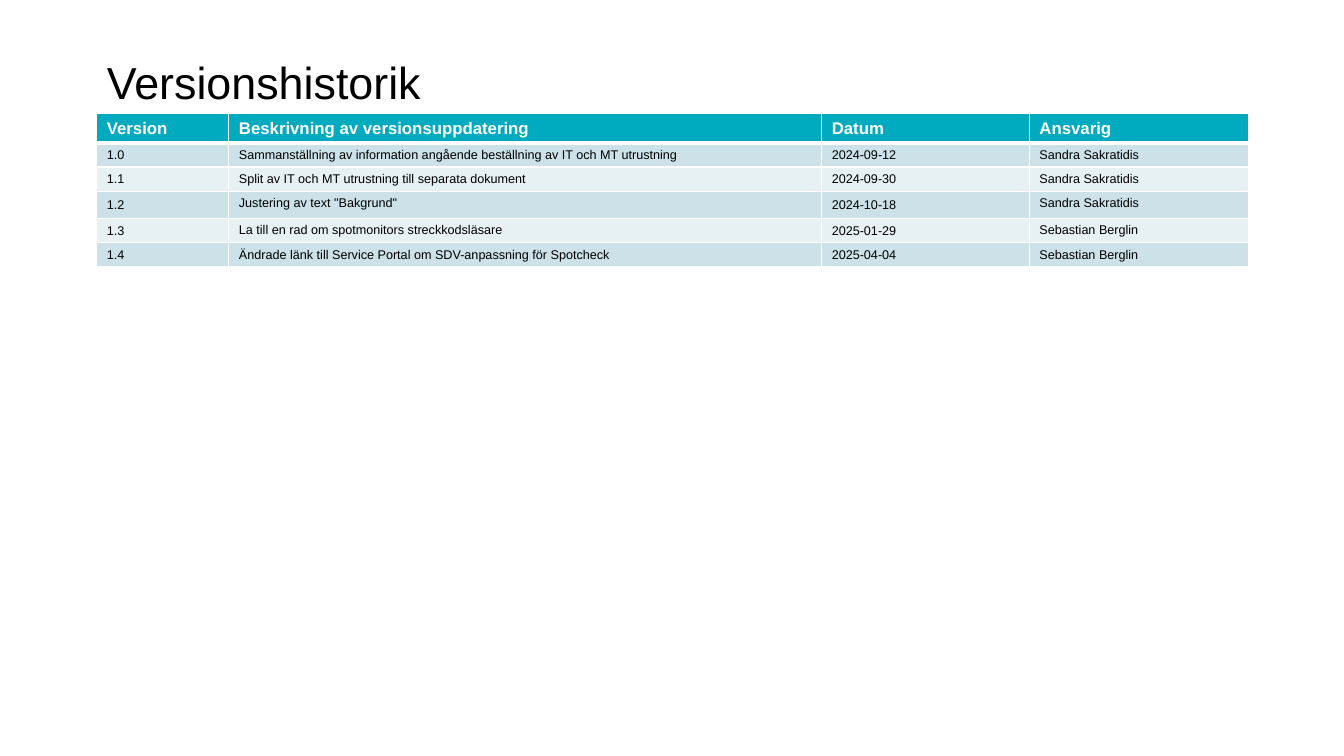
from dataclasses import dataclass

from lxml import etree
from pptx import Presentation
from pptx.dml.color import RGBColor
from pptx.enum import text
from pptx.oxml import ns
from pptx.util import Inches, Pt


@dataclass(frozen=True)
class Theme:
    font: str = "Arial"
    ink: str = "000000"
    white: str = "FFFFFF"
    head: str = "00ABC0"
    bands: tuple = ("CCE2E8", "E7F1F4")
    title: int = 32
    label: int = 12
    body: int = 9
    thin: int = 1
    thick: int = 3


THEME = Theme()
COLS = (1.31, 5.88, 2.06, 2.17)
ROWS = (0.28, 0.24, 0.24, 0.27, 0.24, 0.24)
MIDDLE = (0, 2)  # columns centred vertically: version and date
HISTORY = (
    ("Version", "Beskrivning av versionsuppdatering", "Datum", "Ansvarig"),
    ("1.0", "Sammanställning av information angående beställning av IT och MT utrustning",
     "2024-09-12", "Sandra Sakratidis"),
    ("1.1", "Split av IT och MT utrustning till separata dokument",
     "2024-09-30", "Sandra Sakratidis"),
    ("1.2", "Justering av text \"Bakgrund\"", "2024-10-18", "Sandra Sakratidis"),
    ("1.3", "La till en rad om spotmonitors streckkodsläsare",
     "2025-01-29", "Sebastian Berglin"),
    ("1.4", "Ändrade länk till Service Portal om SDV-anpassning för Spotcheck",
     "2025-04-04", "Sebastian Berglin"),
)


def add_run(para, words, size, color, bold=False):
    run = para.add_run()
    run.text = words
    font = run.font
    font.name, font.size, font.bold = THEME.font, Pt(size), bold
    font.color.rgb = RGBColor.from_string(color)


def set_title(slide, words):
    title = slide.shapes.title
    title.left, title.top = Inches(0.96), Inches(0.43)
    title.width, title.height = Inches(11.42), Inches(0.47)
    frame = title.text_frame
    frame.auto_size = text.MSO_AUTO_SIZE.NONE
    frame.word_wrap = True
    frame.vertical_anchor = text.MSO_ANCHOR.TOP
    frame.margin_top, frame.margin_bottom = Inches(0.11), 0
    para = frame.paragraphs[0]
    para.alignment = text.PP_ALIGN.LEFT
    add_run(para, words, THEME.title, THEME.ink)


def set_edges(cell, **widths):
    """Draw white cell borders; widths in points by side, in L, R, T, B order."""
    props = cell._tc.get_or_add_tcPr()
    for side, width in widths.items():
        line = etree.SubElement(props, ns.qn(f"a:ln{side}"), w=str(Pt(width)))
        fill = etree.SubElement(line, ns.qn("a:solidFill"))
        etree.SubElement(fill, ns.qn("a:srgbClr"), val=THEME.white)


def fill_cell(cell, words, row, col):
    head = row == 0
    thin, thick = THEME.thin, THEME.thick
    set_edges(cell, L=thin, R=thin, T=thick if row == 1 else thin,
              B=thick if head else thin)
    cell.fill.solid()
    shade = THEME.head if head else THEME.bands[(row - 1) % 2]
    cell.fill.fore_color.rgb = RGBColor.from_string(shade)
    if not head and col in MIDDLE:
        cell.vertical_anchor = text.MSO_ANCHOR.MIDDLE
    size, color = (THEME.label, THEME.white) if head else (THEME.body, THEME.ink)
    add_run(cell.text_frame.paragraphs[0], words, size, color, head)


def add_history(slide):
    table = slide.shapes.add_table(
        len(ROWS), len(COLS), Inches(0.96), Inches(1.13),
        Inches(sum(COLS)), Inches(sum(ROWS))).table
    for col, width in zip(table.columns, COLS):
        col.width = Inches(width)
    for row, height in zip(table.rows, ROWS):
        row.height = Inches(height)
    for r, entry in enumerate(HISTORY):
        for c, words in enumerate(entry):
            fill_cell(table.cell(r, c), words, r, c)


def main():
    deck = Presentation()
    deck.slide_width, deck.slide_height = Inches(13.33), Inches(7.5)
    slide = deck.slides.add_slide(deck.slide_layouts[5])
    set_title(slide, "Versionshistorik")
    add_history(slide)
    deck.save("out.pptx")


if __name__ == "__main__":
    main()
